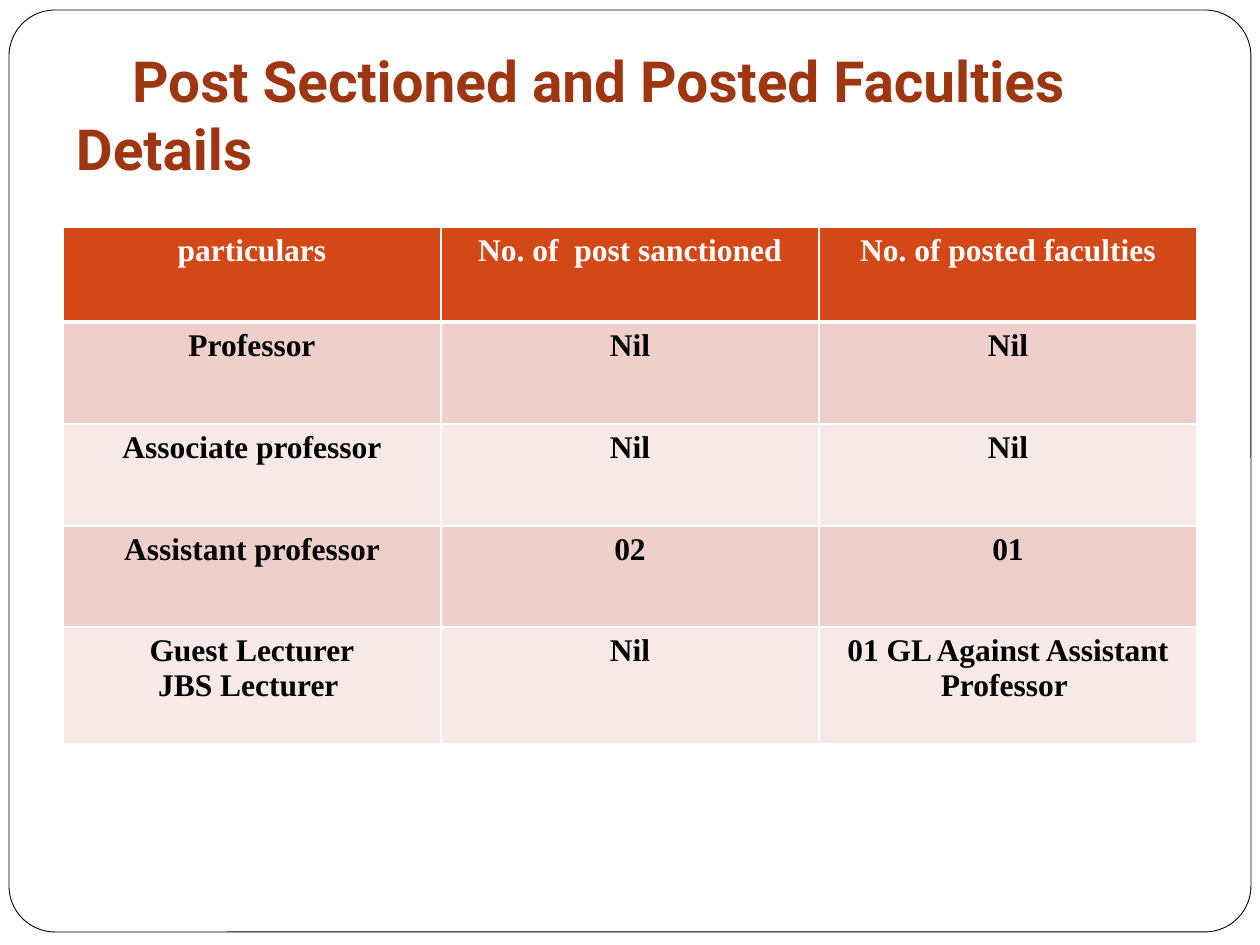
"""Build the slide on sanctioned and posted faculty numbers."""
from dataclasses import dataclass

from lxml.etree import SubElement
from pptx import Presentation
from pptx.dml.color import RGBColor as Rgb
from pptx.enum.shapes import MSO_SHAPE as Shape
from pptx.enum.text import MSO_ANCHOR as Anchor, MSO_AUTO_SIZE as AutoSize, PP_ALIGN as Align
from pptx.oxml.ns import qn
from pptx.util import Pt


@dataclass(frozen=True)
class Theme:
    white: str = "FFFFFF"
    black: str = "000000"
    title: str = "9E3611"
    header: str = "D34817"
    bands: tuple = ("EFCFCC", "F7E9E8")
    title_font: str = "Roboto"
    table_font: str = "Times New Roman"
    title_size: float = 32.4
    table_size: float = 18


theme = Theme()


def px(count):
    return round(count * 914400 / 126)


def style_text(paragraph, font_name, size, color, align):
    paragraph.alignment = align
    for run in paragraph.runs:
        run.font.name = font_name
        run.font.size = Pt(size)
        run.font.bold = True
        run.font.color.rgb = Rgb.from_string(color)


deck = Presentation()
deck.slide_width, deck.slide_height = px(1260), px(945)
slide = deck.slides.add_slide(deck.slide_layouts[5])

frame = slide.shapes.add_shape(Shape.ROUNDED_RECTANGLE, px(9), px(10), px(1242), px(922))
frame.adjustments[0] = 0.05
frame.shadow.inherit = False
frame.fill.solid()
frame.fill.fore_color.rgb = Rgb.from_string(theme.white)
frame.line.color.rgb = Rgb.from_string(theme.black)
frame.line.width = Pt(0.5)
slide.shapes._spTree.insert(2, frame._element)

heading = slide.shapes.title
heading.left, heading.top, heading.width, heading.height = px(63), px(38), px(1158), px(157)
heading_text = heading.text_frame
heading_text.text = "Post Sectioned and Posted Faculties Details"
heading_text.word_wrap = True
heading_text.auto_size = AutoSize.NONE
heading_text.vertical_anchor = Anchor.BOTTOM
heading_text.margin_left = heading_text.margin_right = heading_text.margin_bottom = px(13)
heading_text.margin_top = px(6)
heading_line = heading_text.paragraphs[0]
style_text(heading_line, theme.title_font, theme.title_size, theme.title, Align.LEFT)
heading_line._p.get_or_add_pPr().set("indent", str(px(56)))

posts = [
    ("particulars", "No. of  post sanctioned", "No. of posted faculties"),
    ("Professor", "Nil", "Nil"),
    ("Associate professor", "Nil", "Nil"),
    ("Assistant professor", "02", "01"),
    ("Guest Lecturer\nJBS Lecturer ", "Nil", "01 GL Against Assistant Professor "),
]
row_heights = [95, 102, 102, 101, 117]
faculty = slide.shapes.add_table(
    len(posts), 3, px(63), px(227), px(1134), px(sum(row_heights))
).table
for column in faculty.columns:
    column.width = px(378)

for row, (entries, height) in enumerate(zip(posts, row_heights)):
    faculty.rows[row].height = px(height)
    is_header = row == 0
    fill_color = theme.header if is_header else theme.bands[(row - 1) % 2]
    text_color = theme.white if is_header else theme.black
    for col, entry in enumerate(entries):
        cell = faculty.cell(row, col)
        cell.text_frame.text = entry
        for paragraph in cell.text_frame.paragraphs:
            style_text(paragraph, theme.table_font, theme.table_size, text_color, Align.CENTER)
        borders = {"a:lnL": 1, "a:lnR": 1, "a:lnT": 3 if row == 1 else 1,
                   "a:lnB": 3 if is_header else 1}
        for side, width in borders.items():
            border = SubElement(cell._tc.get_or_add_tcPr(), qn(side), w=str(Pt(width)))
            SubElement(SubElement(border, qn("a:solidFill")), qn("a:srgbClr"), val=theme.white)
        cell.fill.solid()
        cell.fill.fore_color.rgb = Rgb.from_string(fill_color)

deck.save("out.pptx")
